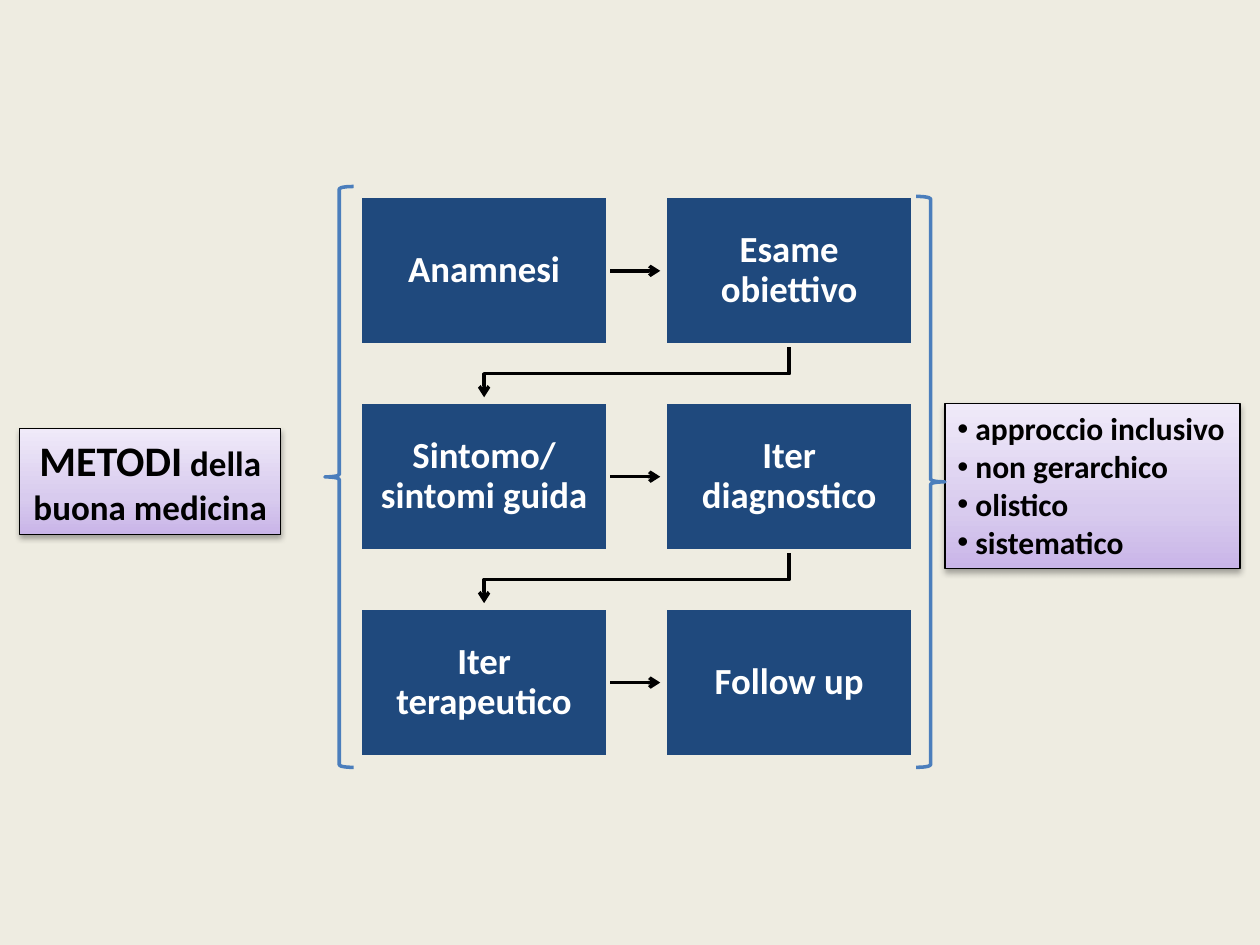
from dataclasses import dataclass
from copy import deepcopy

from lxml import etree
from pptx import Presentation
from pptx import util as u
from pptx.dml.color import RGBColor
from pptx.enum import shapes, text
from pptx.oxml.ns import qn


@dataclass(frozen=True)
class Theme:
    font: str = "Calibri"
    background: RGBColor = RGBColor(0xEE, 0xEC, 0xE1)
    step: RGBColor = RGBColor(0x1F, 0x49, 0x7D)
    brace: RGBColor = RGBColor(0x4B, 0x7E, 0xBC)
    light: RGBColor = RGBColor(0xFF, 0xFF, 0xFF)
    dark: RGBColor = RGBColor(0, 0, 0)
    gradient: tuple = ((0, "C9B5E8"), (0.35, "D8CBEE"), (1, "F0EAF9"))
    step_size: int = 21
    heading_size: int = 24
    method_size: int = 20
    list_size: int = 18
    line: float = 2
    thin_line: float = 0.75


@dataclass(frozen=True)
class Box:
    left: float
    top: float
    width: float
    height: float

    @property
    def right(self) -> float:
        return self.left + self.width

    @property
    def bottom(self) -> float:
        return self.top + self.height

    @property
    def center(self) -> float:
        return self.left + self.width / 2

    @property
    def middle(self) -> float:
        return self.top + self.height / 2

    def lengths(self) -> list:
        return [u.Cm(n) for n in (self.left, self.top, self.width, self.height)]


THEME = Theme()
STEPS = ("Anamnesi", "Esame obiettivo", "Sintomo/ sintomi guida",
         "Iter diagnostico", "Iter terapeutico", "Follow up")
QUALITIES = (" approccio inclusivo", " non gerarchico", " olistico", " sistematico")
COLUMNS = 2
COLUMN_PITCH, ROW_PITCH = 6.15, 4.15
ARROW_GAP = 0.1
METHODS_BOX = Box(0.4, 8.64, 5.26, 2.13)
QUALITIES_BOX = Box(19.05, 8.13, 5.95, 3.33)
LEFT_BRACE = Box(6.55, 3.76, 0.58, 11.71)
RIGHT_BRACE = Box(18.47, 3.96, 0.58, 11.51)


def step_box(index: int) -> Box:
    row, column = divmod(index, COLUMNS)
    return Box(7.26 + column * COLUMN_PITCH, 3.96 + row * ROW_PITCH, 5, 3)


def add_preset(slide, kind, box: Box, color: RGBColor, width: float):
    shape = slide.shapes.add_shape(kind, *box.lengths())
    shape.shadow.inherit = False
    shape.line.color.rgb = color
    shape.line.width = u.Pt(width)
    return shape


def style_font(font, size: float, color: RGBColor) -> None:
    font.name = THEME.font
    font.size = u.Pt(size)
    font.bold = True
    font.color.rgb = color


def add_arrow(slide, start: Box, end: Box) -> None:
    if start.top == end.top:
        shape = slide.shapes.add_connector(
            shapes.MSO_CONNECTOR.STRAIGHT, u.Cm(start.right), u.Cm(start.middle),
            u.Cm(end.left - ARROW_GAP), u.Cm(end.middle))
        etree.SubElement(shape._element.spPr, qn("a:effectLst"))
    else:
        turn = start.bottom + (end.top - start.bottom) / 2
        points = ((start.center, turn), (end.center, turn),
                  (end.center, end.top - ARROW_GAP))
        builder = slide.shapes.build_freeform(u.Cm(start.center), u.Cm(start.bottom))
        builder.add_line_segments([(u.Cm(x), u.Cm(y)) for x, y in points], close=False)
        shape = builder.convert_to_shape()
        shape.shadow.inherit = False
        shape.fill.background()
    shape.line.color.rgb = THEME.dark
    shape.line.width = u.Pt(THEME.line)
    etree.SubElement(shape.line._get_or_add_ln(), qn("a:tailEnd"), type="arrow")


def add_step(slide, label: str, box: Box) -> None:
    shape = add_preset(slide, shapes.MSO_SHAPE.RECTANGLE, box,
                       THEME.background, THEME.line)
    shape.fill.solid()
    shape.fill.fore_color.rgb = THEME.step
    frame = shape.text_frame
    frame.word_wrap = True
    frame.vertical_anchor = text.MSO_ANCHOR.MIDDLE
    frame.margin_left = frame.margin_right = u.Cm(0.41)
    frame.margin_top = frame.margin_bottom = u.Cm(0.41)
    paragraph = frame.paragraphs[0]
    paragraph.text = label
    paragraph.alignment = text.PP_ALIGN.CENTER
    paragraph.line_spacing = 0.9
    style_font(paragraph.font, THEME.step_size, THEME.light)


def add_panel(slide, box: Box, wrap: bool):
    shape = add_preset(slide, shapes.MSO_SHAPE.RECTANGLE, box,
                       THEME.dark, THEME.thin_line)
    shape.fill.gradient()
    shape.fill.gradient_angle = 90
    properties = shape._element.spPr
    stop_list = properties.find(".//" + qn("a:gsLst"))
    stop_list.append(deepcopy(stop_list[-1]))
    for stop, (position, color) in zip(shape.fill.gradient_stops, THEME.gradient):
        stop.position = position
        stop.color.rgb = RGBColor.from_string(color)
    shadow = etree.SubElement(
        properties.find(qn("a:effectLst")), qn("a:outerShdw"), blurRad=str(u.Pt(3.5)),
        dist=str(u.Pt(2.2)), dir="5400000", rotWithShape="0")
    color = etree.SubElement(shadow, qn("a:srgbClr"), val=str(THEME.dark))
    etree.SubElement(color, qn("a:alpha"), val="32000")
    frame = shape.text_frame
    frame.word_wrap = wrap
    frame.auto_size = text.MSO_AUTO_SIZE.SHAPE_TO_FIT_TEXT
    frame.vertical_anchor = text.MSO_ANCHOR.TOP
    return frame


def add_methods(slide) -> None:
    frame = add_panel(slide, METHODS_BOX, wrap=False)
    lines = ((("METODI", THEME.heading_size), (" della", THEME.method_size)),
             (("buona medicina", THEME.method_size),))
    for index, line in enumerate(lines):
        paragraph = frame.add_paragraph() if index else frame.paragraphs[0]
        paragraph.alignment = text.PP_ALIGN.CENTER
        for words, size in line:
            run = paragraph.add_run()
            run.text = words
            style_font(run.font, size, THEME.dark)


def add_qualities(slide) -> None:
    frame = add_panel(slide, QUALITIES_BOX, wrap=True)
    for index, quality in enumerate(QUALITIES):
        paragraph = frame.add_paragraph() if index else frame.paragraphs[0]
        paragraph.text = quality
        paragraph.alignment = text.PP_ALIGN.LEFT
        properties = paragraph._p.get_or_add_pPr()
        etree.SubElement(properties, qn("a:buFont"), typeface="Arial")
        etree.SubElement(properties, qn("a:buChar"), char="•")
        style_font(paragraph.font, THEME.list_size, THEME.dark)


def add_brace(slide, kind, box: Box) -> None:
    add_preset(slide, kind, box, THEME.brace, THEME.line).fill.background()


def main() -> None:
    presentation = Presentation()
    presentation.slide_width, presentation.slide_height = u.Cm(25.4), u.Cm(19.05)
    slide = presentation.slides.add_slide(presentation.slide_layouts[6])
    slide.background.fill.solid()
    slide.background.fill.fore_color.rgb = THEME.background
    for index, label in enumerate(STEPS):
        if index + 1 < len(STEPS):
            add_arrow(slide, step_box(index), step_box(index + 1))
        add_step(slide, label, step_box(index))
    add_methods(slide)
    add_brace(slide, shapes.MSO_SHAPE.LEFT_BRACE, LEFT_BRACE)
    add_qualities(slide)
    add_brace(slide, shapes.MSO_SHAPE.RIGHT_BRACE, RIGHT_BRACE)
    presentation.save("out.pptx")


if __name__ == "__main__":
    main()
